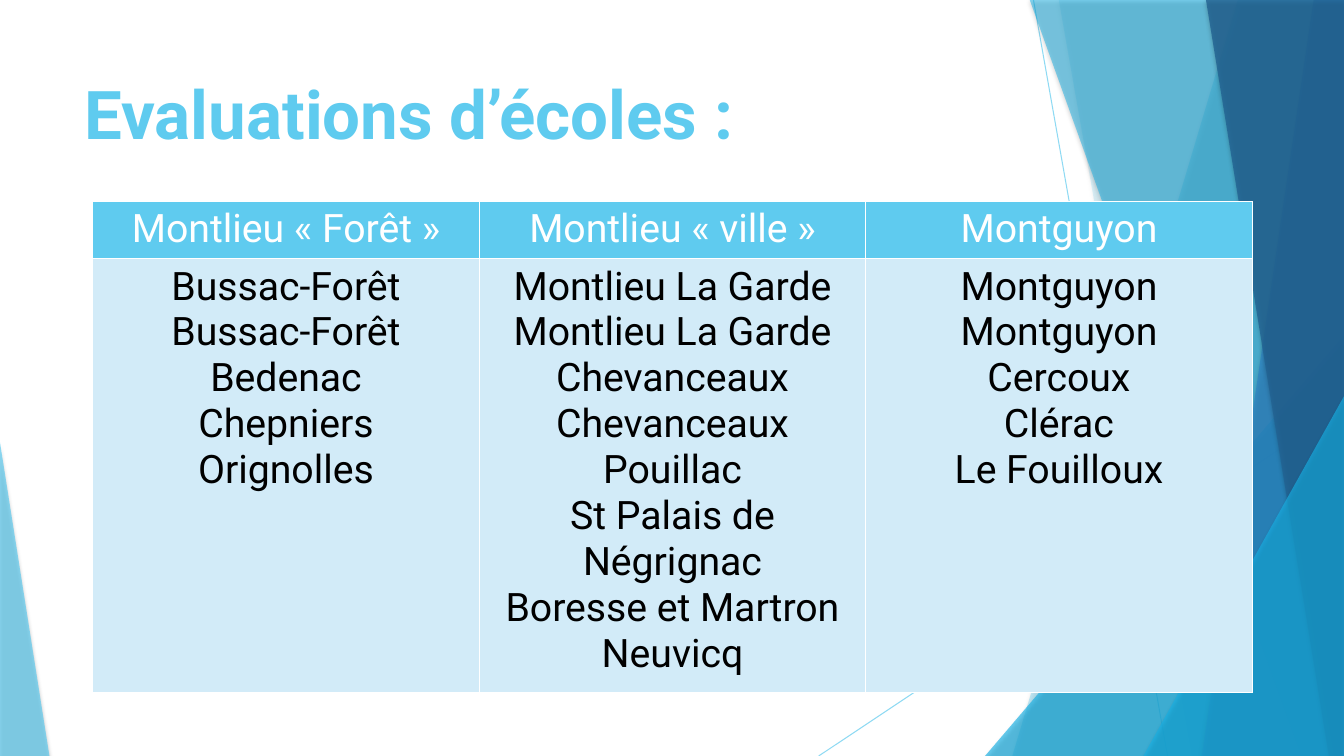
from lxml import etree
from pptx import Presentation
from pptx.dml.color import RGBColor
from pptx.enum import shapes, text
from pptx.oxml import ns
from pptx.util import Inches, Pt

SKY = RGBColor(0x5F, 0xCB, 0xEF)
CYAN = RGBColor(0x17, 0xB0, 0xE4)
BLUE = RGBColor(0x2E, 0x83, 0xC3)
NAVY = RGBColor(0x22, 0x62, 0x92)
PALE = RGBColor(0xD2, 0xEB, 0xF8)
WHITE = RGBColor(0xFF, 0xFF, 0xFF)
BLACK = RGBColor(0, 0, 0)
FONT = "Roboto"
WIDE, HIGH, TOP = 13.33, 7.5, -0.01

TITLE = "Evaluations d’écoles :"
SCHOOLS = {
    "Montlieu « Forêt »": [
        "Bussac-Forêt", "Bussac-Forêt", "Bedenac", "Chepniers", "Orignolles"],
    "Montlieu « ville »": [
        "Montlieu La Garde", "Montlieu La Garde", "Chevanceaux", "Chevanceaux",
        "Pouillac", "St Palais de Négrignac", "Boresse et Martron", "Neuvicq"],
    "Montguyon": [
        "Montguyon", "Montguyon", "Cercoux", "Clérac", "Le Fouilloux"],
}
RAYS = [((10.25, 0), (11.58, HIGH)), ((WIDE, 4.03), (8.12, HIGH))]
# kind, top x and base x of a band, or left, top, width and apex of a triangle
FACETS = [
    ("band", (12.28, 10.04), SKY, 36),
    ("band", (10.5, 11.82), SKY, 20),
    ("peak", (9.77, 3.33, 3.56, 1), CYAN, 66),
    ("band", (10.21, 12.91), CYAN, 50),
    ("band", (13.03, 11.92), BLUE, 70),
    ("band", (11.96, 13.18), NAVY, 80),
    ("peak", (11.34, 3.93, 1.99, 1), CYAN, 66),
    ("peak", (0, 4.39, 0.49, 0), SKY, 70),
]


def add(parent, tag, **attrs):
    node = etree.SubElement(parent, ns.qn(tag))
    for key, value in attrs.items():
        node.set(key, str(value))
    return node


def fade(color, alpha):
    node = color._xFill.find(ns.qn("a:srgbClr"))
    add(node, "a:alpha", val=alpha * 1000)


def draw_ray(slide, start, end):
    ray = slide.shapes.add_connector(
        shapes.MSO_CONNECTOR.STRAIGHT, *map(Inches, start + end))
    ray.line.color.rgb = SKY
    ray.line.width = Pt(0.75)
    fade(ray.line.fill, 70) if hasattr(ray.line.fill, "_xFill") else add(
        ray.line._ln.find(".//" + ns.qn("a:srgbClr")), "a:alpha", val=70000)
    add(ray._element.spPr, "a:effectLst")


def draw_facet(slide, kind, place, color, alpha):
    if kind == "band":
        head, base = place
        path = slide.shapes.build_freeform(Inches(head), Inches(TOP))
        path.add_line_segments(
            [(Inches(x), Inches(y)) for x, y in
             ((WIDE, TOP), (WIDE, HIGH), (base, HIGH))], close=True)
        facet = path.convert_to_shape()
    else:
        left, top, width, apex = place
        facet = slide.shapes.add_shape(
            shapes.MSO_SHAPE.ISOSCELES_TRIANGLE, Inches(left), Inches(top),
            Inches(width), Inches(HIGH - top))
        facet.adjustments[0] = apex
    facet.fill.solid()
    facet.fill.fore_color.rgb = color
    facet.line.fill.background()
    props = facet._element.spPr
    tint = props.find(ns.qn("a:solidFill")).find(ns.qn("a:srgbClr"))
    add(tint, "a:alpha", val=alpha * 1000)
    shade = add(add(props, "a:effectLst"), "a:outerShdw", blurRad=Pt(3),
                dist=Pt(2), dir=5400000, rotWithShape=0)
    add(add(shade, "a:srgbClr", val="000000"), "a:alpha", val=35000)


def style(frame, size, color, bold=False, align=None):
    for para in frame.paragraphs:
        para.alignment = align
        for run in para.runs:
            run.font.name = FONT
            run.font.size = Pt(size)
            run.font.bold = bold
            run.font.color.rgb = color


def fill_cell(cell, words, fill, color):
    cell.text_frame.text = words
    style(cell.text_frame, 28, color, align=text.PP_ALIGN.CENTER)
    props = cell._tc.get_or_add_tcPr()
    for side in ("a:lnL", "a:lnR", "a:lnT", "a:lnB"):
        edge = add(props, side, w=Pt(0.96))
        add(add(edge, "a:solidFill"), "a:srgbClr", val=WHITE)
    cell.fill.solid()
    cell.fill.fore_color.rgb = fill


def main():
    deck = Presentation()
    deck.slide_width, deck.slide_height = Inches(WIDE), Inches(HIGH)
    slide = deck.slides.add_slide(deck.slide_layouts[6])
    for start, end in RAYS:
        draw_ray(slide, start, end)
    for facet in FACETS:
        draw_facet(slide, *facet)

    title = slide.shapes.add_textbox(
        Inches(0.74), Inches(0.67), Inches(9.4), Inches(1.44)).text_frame
    title.word_wrap = True
    title.text = TITLE
    style(title, 48, SKY, bold=True)

    table = slide.shapes.add_table(
        2, len(SCHOOLS), Inches(0.92), Inches(2), Inches(11.5),
        Inches(4.75)).table
    table.rows[0].height = Inches(0.56)
    table.rows[1].height = Inches(4.19)
    for col, (town, names) in enumerate(SCHOOLS.items()):
        fill_cell(table.cell(0, col), town, SKY, WHITE)
        fill_cell(table.cell(1, col), "\n".join(names), PALE, BLACK)
    deck.save("out.pptx")


if __name__ == "__main__":
    main()
